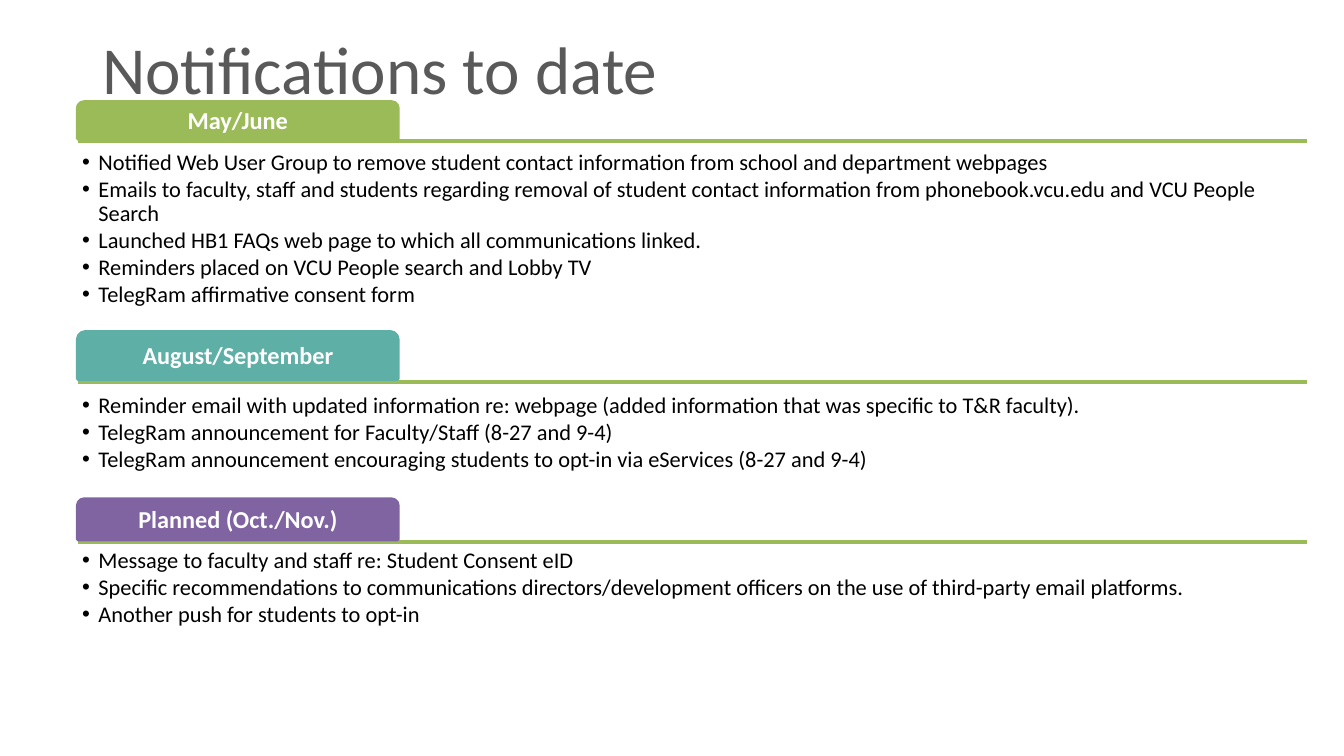
from dataclasses import dataclass

from lxml import etree
from pptx import Presentation
from pptx.dml.color import RGBColor
from pptx.enum.shapes import MSO_CONNECTOR, MSO_SHAPE
from pptx.enum.text import MSO_ANCHOR, MSO_AUTO_SIZE, PP_ALIGN
from pptx.oxml.ns import qn
from pptx.util import Cm, Pt

STRAIGHT = MSO_CONNECTOR.STRAIGHT
TAB = MSO_SHAPE.ROUND_2_SAME_RECTANGLE
TOP, MIDDLE = MSO_ANCHOR.TOP, MSO_ANCHOR.MIDDLE
LEFT, CENTER = PP_ALIGN.LEFT, PP_ALIGN.CENTER
NO_AUTOFIT = MSO_AUTO_SIZE.NONE
COMPARISON_LAYOUT = 4


@dataclass(frozen=True)
class Theme:
    font: str = "Calibri"
    title_size: int = 36
    tab_size: int = 13
    list_size: int = 12
    line_width: int = 2
    title_color: str = "595959"
    text_color: str = "000000"
    tab_text_color: str = "FFFFFF"
    green: str = "9BBB59"
    teal: str = "5EAFA6"
    purple: str = "8064A2"


@dataclass(frozen=True)
class Section:
    label: str
    color: str
    rule_y: float
    tab_height: float
    list_gap: float
    list_height: float
    items: tuple


THEME = Theme()
MARGIN = 1.47
RULE_END = 24.71
TAB_WIDTH = 6.05
TAB_GAP = 0.05
LIST_WIDTH = 23.27

SECTIONS = (
    Section("May/June", THEME.green, 2.67, 0.69, 0.1, 2.59, (
        "Notified Web User Group to remove student contact information from school and department webpages",
        "Emails to faculty, staff and students regarding removal of student contact information "
        "from phonebook.vcu.edu and VCU People Search",
        "Launched HB1 FAQs web page to which all communications linked.",
        "Reminders placed on VCU People search and Lobby TV",
        "TelegRam affirmative consent form",
    )),
    Section("August/September", THEME.teal, 7.21, 0.89, 0.16, 1.88, (
        "Reminder email with updated information re: webpage "
        "(added information that was specific to T&R faculty).",
        "TelegRam announcement for Faculty/Staff (8-27 and 9-4)",
        "TelegRam announcement encouraging students to opt-in via eServices (8-27 and 9-4)",
    )),
    Section("Planned (Oct./Nov.)", THEME.purple, 10.24, 0.76, 0.05, 2.34, (
        "Message to faculty and staff re: Student Consent eID",
        "Specific recommendations to communications directors/development officers "
        "on the use of third-party email platforms.",
        "Another push for students to opt-in",
    )),
)


def add_bullet(para, indent):
    properties = para._p.get_or_add_pPr()
    properties.set("marL", str(Cm(indent)))
    properties.set("indent", str(-Cm(indent)))
    etree.SubElement(properties, qn("a:buFont")).set("typeface", "Arial")
    etree.SubElement(properties, qn("a:buChar")).set("char", "•")


def write_text(box, lines, *, size, color, bold=False, align=LEFT, anchor=TOP,
               inset=(0.08, 0.08), spacing=0.9, after=0, bullet_indent=None):
    frame = box.text_frame
    frame.word_wrap = True
    frame.auto_size = NO_AUTOFIT
    frame.vertical_anchor = anchor
    frame.margin_left = frame.margin_right = Cm(inset[0])
    frame.margin_top = frame.margin_bottom = Cm(inset[1])
    for index, line in enumerate(lines):
        para = frame.add_paragraph() if index else frame.paragraphs[0]
        para.alignment = align
        para.line_spacing = spacing
        para.space_before = Pt(0)
        para.space_after = Pt(after)
        if bullet_indent is not None:
            add_bullet(para, bullet_indent)
        span = para.add_run()
        span.text = line
        span.font.name = THEME.font
        span.font.size = Pt(size)
        span.font.bold = bold
        span.font.color.rgb = RGBColor.from_string(color)


class Page:
    def __init__(self, deck, theme):
        self.theme = theme
        self.slide = deck.slides.add_slide(deck.slide_layouts[COMPARISON_LAYOUT])
        self.bodies = [box for box in self.slide.placeholders
                       if box.placeholder_format.idx in range(1, 5)]

    def place(self, box, left, top, width, height):
        box.left, box.top = Cm(left), Cm(top)
        box.width, box.height = Cm(width), Cm(height)

    def title(self, text, left, top, width, height):
        box = self.slide.shapes.title
        self.place(box, left, top, width, height)
        write_text(box, [text], size=self.theme.title_size, color=self.theme.title_color,
                   anchor=MIDDLE, inset=(0.25, 0.13), spacing=1.0)

    def rule(self, left, right, y):
        line = self.slide.shapes.add_connector(STRAIGHT, Cm(left), Cm(y), Cm(right), Cm(y))
        line.line.color.rgb = RGBColor.from_string(self.theme.green)
        line.line.width = Pt(self.theme.line_width)
        etree.SubElement(line._element.spPr, qn("a:effectLst"))

    def tab(self, text, color, left, top, width, height):
        box = self.slide.shapes.add_shape(TAB, Cm(left), Cm(top), Cm(width), Cm(height))
        box.shadow.inherit = False
        box.fill.solid()
        box.fill.fore_color.rgb = RGBColor.from_string(color)
        box.line.color.rgb = RGBColor.from_string(color)
        box.line.width = Pt(self.theme.line_width)
        write_text(box, [text], size=self.theme.tab_size, color=self.theme.tab_text_color,
                   bold=True, align=CENTER, anchor=MIDDLE)

    def bullets(self, items, left, top, width, height):
        box = self.bodies.pop(0)
        self.place(box, left, top, width, height)
        write_text(box, items, size=self.theme.list_size, color=self.theme.text_color,
                   after=1.5, bullet_indent=0.31)

    def section(self, section):
        self.rule(MARGIN, RULE_END, section.rule_y)
        tab_top = section.rule_y - TAB_GAP - section.tab_height
        self.tab(section.label, section.color, MARGIN, tab_top, TAB_WIDTH, section.tab_height)
        self.bullets(section.items, MARGIN, section.rule_y + section.list_gap,
                     LIST_WIDTH, section.list_height)

    def remove_unused(self):
        for box in self.bodies:
            box._element.getparent().remove(box._element)


def main():
    deck = Presentation()
    deck.slide_width, deck.slide_height = Cm(25.4), Cm(14.28)
    page = Page(deck, THEME)
    page.title("Notifications to date", 1.68, 0.33, 22.86, 1.88)
    for section in SECTIONS:
        page.section(section)
    page.remove_unused()
    deck.save("out.pptx")


if __name__ == "__main__":
    main()
